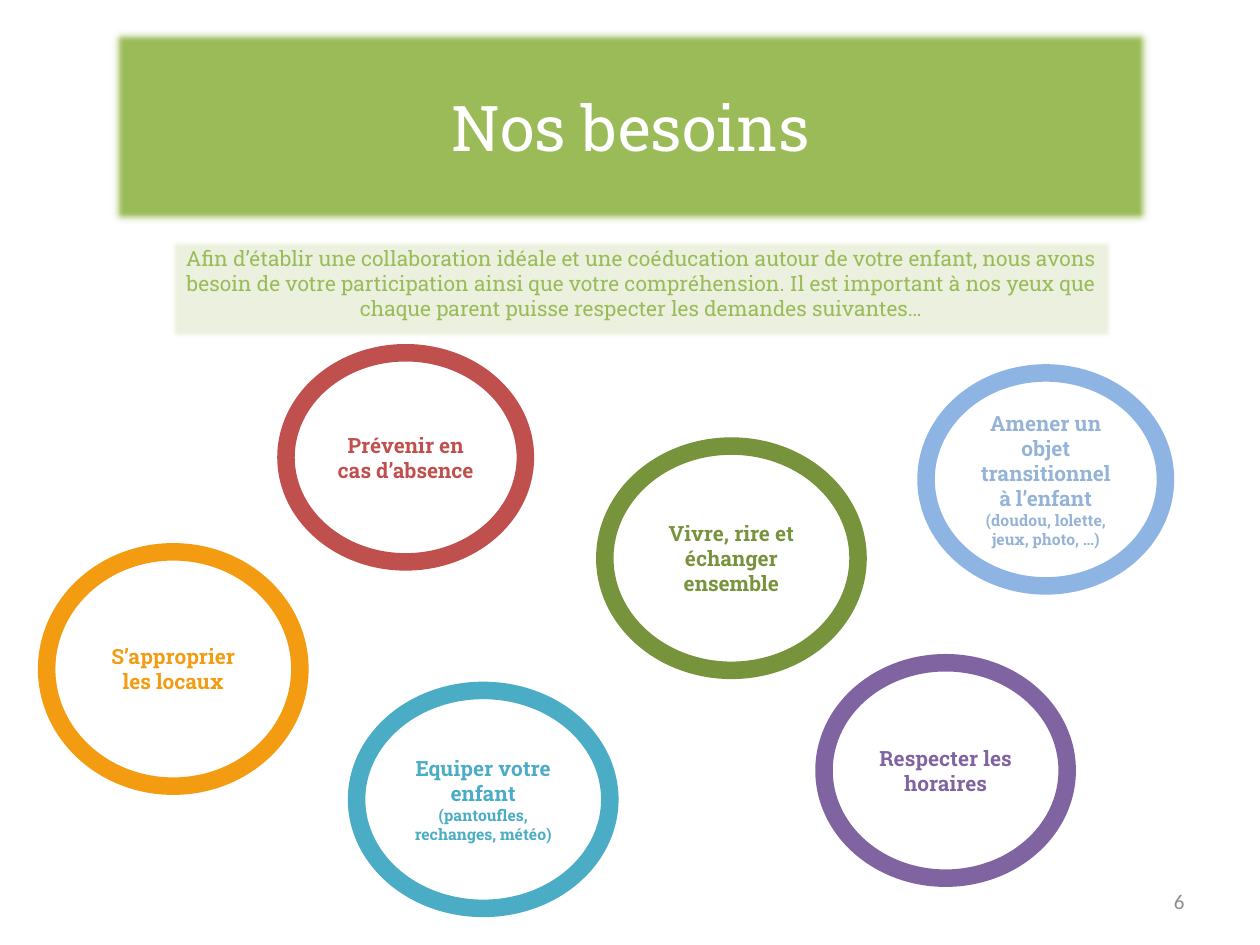
"""Build the "Nos besoins" slide: title banner, introduction and six rings of needs."""
from lxml.etree import SubElement
from pptx import Presentation
from pptx.dml.color import RGBColor
from pptx.enum.shapes import MSO_SHAPE as Shape
from pptx.enum.text import MSO_ANCHOR as Anchor, PP_ALIGN as Align
from pptx.oxml.ns import qn
from pptx.util import Inches, Pt

WHITE = RGBColor(0xFF, 0xFF, 0xFF)
GREEN = RGBColor(0x9B, 0xBB, 0x59)
PALE_GREEN = RGBColor(0xEB, 0xF1, 0xDE)
PURPLE = RGBColor(0x80, 0x64, 0xA2)
RED = RGBColor(0xC0, 0x50, 0x4D)
TEAL = RGBColor(0x4B, 0xAC, 0xC6)
ORANGE = RGBColor(0xF3, 0x9C, 0x12)
OLIVE = RGBColor(0x77, 0x93, 0x3C)
SKY = RGBColor(0x8E, 0xB4, 0xE3)
SOFT_BLUE = RGBColor(0x95, 0xB3, 0xD7)
GREY = RGBColor(0x8C, 0x8C, 0x8C)


def write(shape, runs, color, anchor=Anchor.MIDDLE, align=Align.CENTER,
          bold=False, font="Roboto Slab"):
    frame = shape.text_frame
    frame.word_wrap = True
    frame.vertical_anchor = anchor
    paragraph = frame.paragraphs[0]
    paragraph.alignment = align
    for text, size in runs:
        run = paragraph.add_run()
        run.text = text
        run.font.color.rgb = color
        style = {"name": font, "size": Pt(size), "bold": bold}
        for key, value in style.items():
            setattr(run.font, key, value)
    return paragraph


def add_filled(kind, box, fill):
    shape = slide.shapes.add_shape(kind, *map(Inches, box))
    shape.shadow.inherit = False
    shape.fill.solid()
    shape.fill.fore_color.rgb = fill
    shape.line.fill.background()
    return shape


prs = Presentation()
prs.slide_width, prs.slide_height = Inches(10), Inches(7.5)
slide = prs.slides.add_slide(prs.slide_layouts[6])

intro = add_filled(Shape.RECTANGLE, (1.35, 1.9, 7.48, 0.79), PALE_GREEN)
intro_text = (
    "Afin d’établir une collaboration idéale et une coéducation autour de votre "
    "enfant, nous avons besoin de votre participation ainsi que votre "
    "compréhension. Il est important à nos yeux que chaque parent puisse "
    "respecter les demandes suivantes…"
)
write(intro, [(intro_text, 12)], GREEN, Anchor.TOP).space_before = Pt(2.4)

banner = add_filled(Shape.RECTANGLE, (0.87, 0.22, 8.27, 1.57), GREEN)
write(banner, [("Nos besoins", 36)], WHITE)

for panel, radius in ((intro, Pt(2.5)), (banner, Pt(5))):
    effects = panel._element.spPr.find(qn("a:effectLst"))
    SubElement(effects, qn("a:softEdge"), rad=str(radius))

needs = [
    ((6.54, 5.26, 1.93, 1.71), PURPLE, PURPLE, [("Respecter les horaires", 12)]),
    ((2.27, 2.8, 1.9, 1.66), RED, RED, [("Prévenir en cas d’absence", 12)]),
    ((2.83, 5.48, 2.01, 1.73), TEAL, TEAL,
     [("Equiper votre enfant ", 12), ("(pantoufles, rechanges, météo)", 9)]),
    ((0.37, 4.38, 2.01, 1.86), ORANGE, ORANGE, [("S’approprier les locaux", 12)]),
    ((4.8, 3.54, 2.01, 1.78), OLIVE, OLIVE,
     [("Vivre, rire et échanger ensemble", 12)]),
    ((7.35, 2.96, 1.9, 1.69), SKY, SOFT_BLUE,
     [("Amener un objet transitionnel à l’enfant ", 12),
      ("(doudou, lolette, jeux, photo, …)", 9)]),
]
for box, ring_color, text_color, runs in needs:
    need = add_filled(Shape.OVAL, box, WHITE)
    need.line.color.rgb = ring_color
    need.line.width = Pt(10)
    write(need, runs, text_color, bold=True)

page_number = slide.shapes.add_textbox(*map(Inches, (7.17, 6.95, 2.33, 0.4)))
write(page_number, [("6", 12)], GREY, align=Align.RIGHT, font="Calibri")

prs.save("out.pptx")
